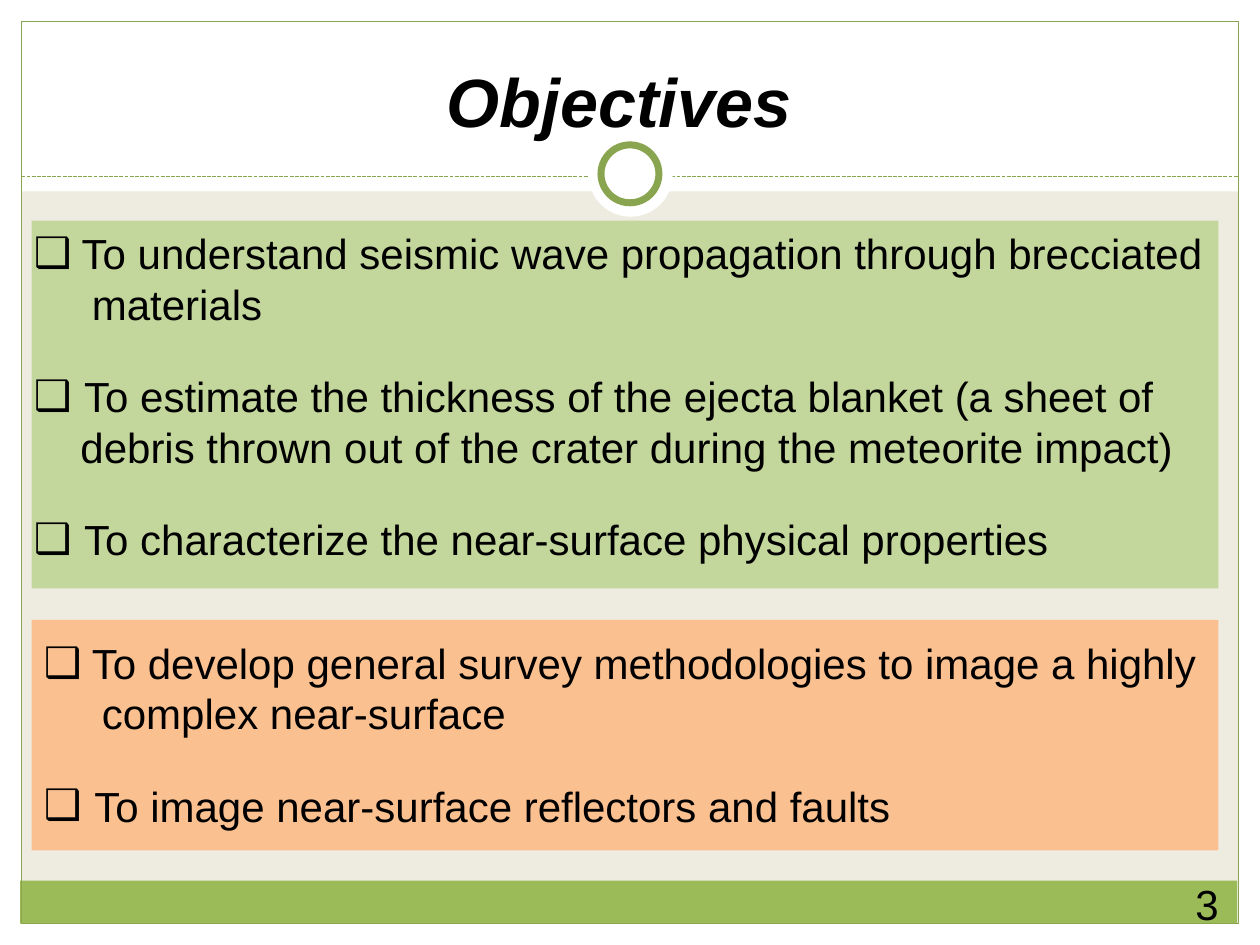
"""Build the Objectives slide with two framed lists of research aims."""
from dataclasses import dataclass

from lxml import etree
from pptx import Presentation
from pptx import util as u
from pptx.dml.color import RGBColor
from pptx.enum import dml, shapes, text
from pptx.oxml.ns import qn

PX = 9144
RECT = shapes.MSO_SHAPE.RECTANGLE
OVAL = shapes.MSO_SHAPE.OVAL


@dataclass(frozen=True)
class Theme:
    paper: str = "EEECE1"
    white: str = "FFFFFF"
    ink: str = "000000"
    footer: str = "9BBB59"
    rule: str = "89A54F"
    science: str = "C3D69B"
    method: str = "FAC090"
    font: str = "Arial"
    title_size: int = 39
    body_size: int = 24
    thin: float = 0.75
    ring: float = 4


class SlideBuilder:
    def __init__(self, slide, theme):
        self.slide = slide
        self.theme = theme
        self.paint(slide.background.fill, theme.paper)

    def paint(self, fill, color):
        fill.solid()
        fill.fore_color.rgb = RGBColor.from_string(color)

    def shape(self, kind, box, fill=None, line=None, width=0.75):
        part = self.slide.shapes.add_shape(kind, *(n * PX for n in box))
        part.shadow.inherit = False
        if fill:
            self.paint(part.fill, fill)
        else:
            part.fill.background()
        if line:
            self.paint(part.line.fill, line)
            part.line.width = u.Pt(width)
        else:
            part.line.fill.background()

    def dashed_rule(self, left, right, y):
        rule = self.slide.shapes.add_connector(
            shapes.MSO_CONNECTOR.STRAIGHT, left * PX, y * PX, right * PX, y * PX)
        self.paint(rule.line.fill, self.theme.rule)
        rule.line.width = u.Pt(self.theme.thin)
        rule.line.dash_style = dml.MSO_LINE.SQUARE_DOT
        etree.SubElement(rule._element.spPr, qn("a:effectLst"))

    def frame(self, box, anchor, inset=(10, 5)):
        frame = self.slide.shapes.add_textbox(*(n * PX for n in box)).text_frame
        frame.word_wrap = True
        frame.vertical_anchor = anchor
        frame.margin_left = frame.margin_right = inset[0] * PX
        frame.margin_top = frame.margin_bottom = inset[1] * PX
        return frame

    def style(self, paragraph, size, strong=False):
        font = paragraph.font
        font.name = self.theme.font
        font.size = u.Pt(size)
        font.color.rgb = RGBColor.from_string(self.theme.ink)
        if strong:
            font.bold = font.italic = True

    def label(self, words, box, size, anchor, inset=(10, 5), strong=False):
        paragraph = self.frame(box, anchor, inset).paragraphs[0]
        paragraph.text = words
        paragraph.alignment = text.PP_ALIGN.CENTER
        self.style(paragraph, size, strong)

    def aims(self, lines, box):
        frame = self.frame(box, text.MSO_ANCHOR.TOP)
        for number, (words, indent, bulleted, ends_aim) in enumerate(lines):
            paragraph = frame.add_paragraph() if number else frame.paragraphs[0]
            paragraph.text = words
            properties = paragraph._p.get_or_add_pPr()
            properties.set("marL", str(indent * PX))
            properties.set("indent", str(-indent * PX if bulleted else 0))
            if bulleted:
                etree.SubElement(properties, qn("a:buFont"), typeface=self.theme.font)
                etree.SubElement(properties, qn("a:buChar"), char="❑")
            else:
                etree.SubElement(properties, qn("a:buNone"))
            if ends_aim:
                paragraph.space_after = u.Pt(24)
            self.style(paragraph, self.theme.body_size)


SCIENCE_AIMS = [
    ("To understand seismic wave propagation through brecciated", 38, True, False),
    ("materials", 46, False, True),
    ("To estimate the thickness of the ejecta blanket (a sheet of", 40, True, False),
    ("debris thrown out of the crater during the meteorite impact)", 37, False, True),
    ("To characterize the near-surface physical properties", 40, True, True),
]
METHOD_AIMS = [
    ("To develop general survey methodologies to image a highly", 38, True, False),
    ("complex near-surface", 46, False, True),
    ("To image near-surface reflectors and faults", 40, True, True),
]


def main():
    theme = Theme()
    deck = Presentation()
    deck.slide_width, deck.slide_height = 1000 * PX, 750 * PX
    page = SlideBuilder(deck.slides.add_slide(deck.slide_layouts[6]), theme)

    for margin in [(0, 733, 1000, 17), (0, 0, 1000, 152),
                   (0, 0, 17, 750), (983, 0, 17, 750)]:
        page.shape(RECT, margin, theme.white)
    page.shape(RECT, (16, 699, 966, 34), theme.footer)
    page.shape(RECT, (17, 17, 966, 716), line=theme.rule, width=theme.thin)
    page.dashed_rule(17, 983, 140)
    page.shape(OVAL, (467, 105, 67, 67), theme.white)
    page.shape(OVAL, (477, 115, 46, 46), theme.white, theme.rule, theme.ring)

    page.label("Objectives", (58, 17, 867, 100), theme.title_size,
               text.MSO_ANCHOR.BOTTOM, strong=True)
    page.label("3", (933, 693, 50, 48), theme.body_size,
               text.MSO_ANCHOR.MIDDLE, inset=(5, 5))

    page.shape(RECT, (25, 175, 942, 292), theme.science)
    page.aims(SCIENCE_AIMS, (17, 176, 958, 279))
    page.shape(RECT, (25, 492, 942, 183), theme.method)
    page.aims(METHOD_AIMS, (25, 501, 958, 165))

    deck.save("out.pptx")


if __name__ == "__main__":
    main()
